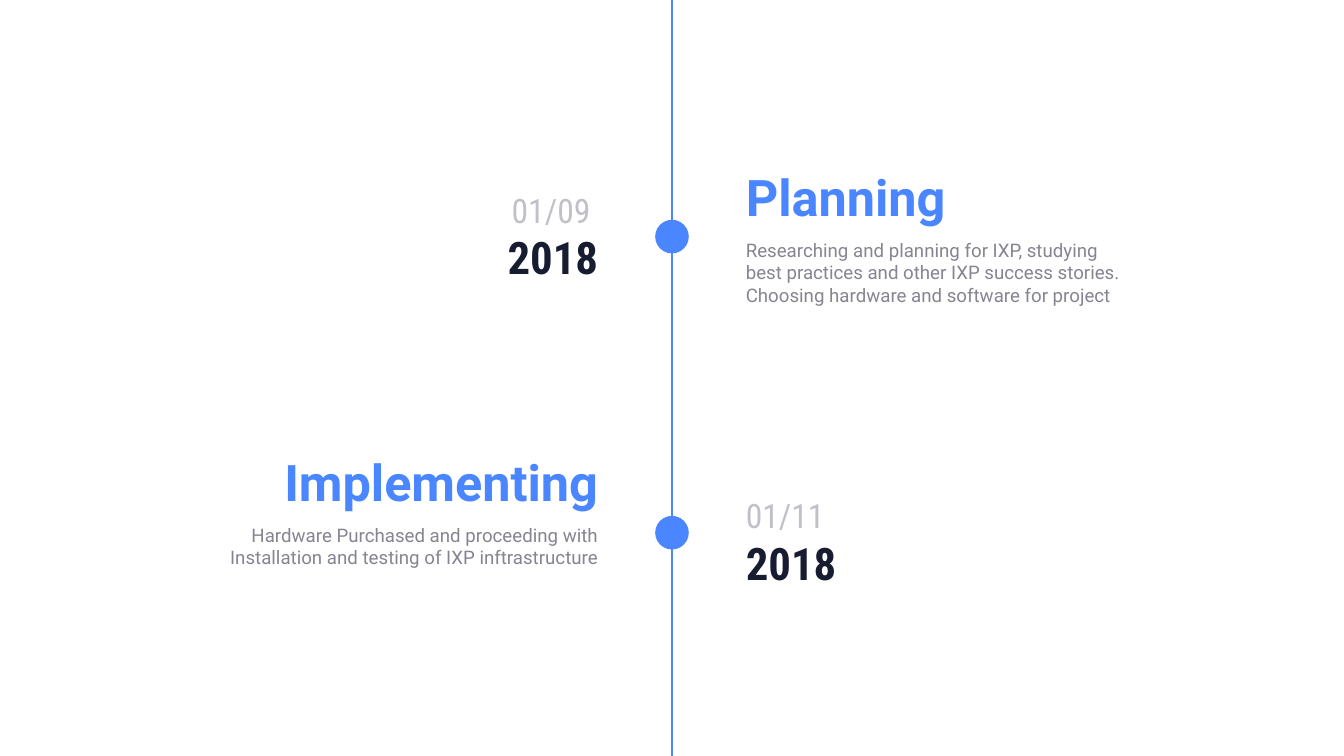
from lxml.etree import SubElement
from pptx import Presentation
from pptx.dml.color import RGBColor
from pptx.enum.shapes import MSO_CONNECTOR as Connector, MSO_SHAPE as Shape
from pptx.enum.text import MSO_AUTO_SIZE as AutoSize, PP_ALIGN as Align
from pptx.oxml.ns import qn
from pptx.util import Emu, Pt

BLUE, GREY, PALE, NAVY = "4A86FF", "858591", "C0C0C8", "171C30"
SLIDE_W, SLIDE_H = 1920, 1080
AXIS_X = SLIDE_W // 2
DOT = 48
SIDE_GAP = 96  # from the axis to the text on either side
DATE_W, STORY_W = 192, 576

# Each text style: font, size, colour, bold
DAY = ("Roboto Condensed", 36, PALE, False)
YEAR = ("Roboto Condensed", 48, NAVY, True)
HEADING = ("Roboto", 54, BLUE, True)
DETAIL = ("Roboto", 20, GREY, False)


def px(length):
    return Emu(length * 9525)


def color(hex_code):
    return RGBColor.from_string(hex_code)


def add_axis_line(slide, top, bottom):
    line = slide.shapes.add_connector(
        Connector.STRAIGHT, px(AXIS_X), px(top), px(AXIS_X), px(bottom))
    line.line.color.rgb = color(BLUE)
    line.line.width = Pt(3)
    SubElement(line._element.spPr, qn("a:effectLst"))


def add_dot(slide, top):
    dot = slide.shapes.add_shape(
        Shape.OVAL, px(AXIS_X - DOT // 2), px(top), px(DOT), px(DOT))
    dot.shadow.inherit = False
    dot.fill.solid()
    dot.fill.fore_color.rgb = color(BLUE)
    dot.line.fill.background()


def add_text(shapes, on_left, top, width, height, lines):
    """Place (text, style) lines beside the axis, aligned towards it."""
    left = AXIS_X - SIDE_GAP - width if on_left else AXIS_X + SIDE_GAP
    box = shapes.add_textbox(px(left), px(top), px(width), px(height))
    frame = box.text_frame
    frame.word_wrap = True
    frame.auto_size = AutoSize.SHAPE_TO_FIT_TEXT
    frame.text = "\n".join(text for text, _ in lines)
    for paragraph, (_, style) in zip(frame.paragraphs, lines):
        paragraph.alignment = Align.RIGHT if on_left else Align.LEFT
        for run in paragraph.runs:
            font = run.font
            font.name, size, hex_code, font.bold = style
            font.size = Pt(size)
            font.color.rgb = color(hex_code)


def add_date(slide, on_left, top, day, year):
    add_text(slide.shapes, on_left, top, DATE_W, 145, [(day, DAY), (year, YEAR)])


def add_story(slide, on_left, top, heading, details, details_height):
    story = slide.shapes.add_group_shape().shapes
    add_text(story, on_left, top, STORY_W, 97, [(heading, HEADING)])
    add_text(story, on_left, top + 103, STORY_W, details_height,
             [(detail, DETAIL) for detail in details])


def main():
    prs = Presentation()
    prs.slide_width, prs.slide_height = px(SLIDE_W), px(SLIDE_H)
    slide = prs.slides.add_slide(prs.slide_layouts[6])

    # Vertical axis, interrupted by a dot at each milestone
    dot_tops = [314, 737]
    starts = [0] + [top + DOT for top in dot_tops]
    for start, end in zip(starts, dot_tops + [SLIDE_H]):
        add_axis_line(slide, start, end)
    for top in dot_tops:
        add_dot(slide, top)

    # Planning: date on the left, story on the right
    add_date(slide, True, 266, "01/09 ", "2018")
    add_story(slide, False, 233, "Planning", [
        "Researching and planning for IXP, studying best practices and other "
        "IXP success stories.\vChoosing hardware and software for project",
    ], 107)

    # Implementing: story on the left, date on the right
    add_story(slide, True, 640, "Implementing", [
        "Hardware Purchased and proceeding with",
        "Installation and testing of IXP inftrastructure",
    ], 74)
    add_date(slide, False, 703, "01/11", "2018")

    prs.save("out.pptx")


if __name__ == "__main__":
    main()
